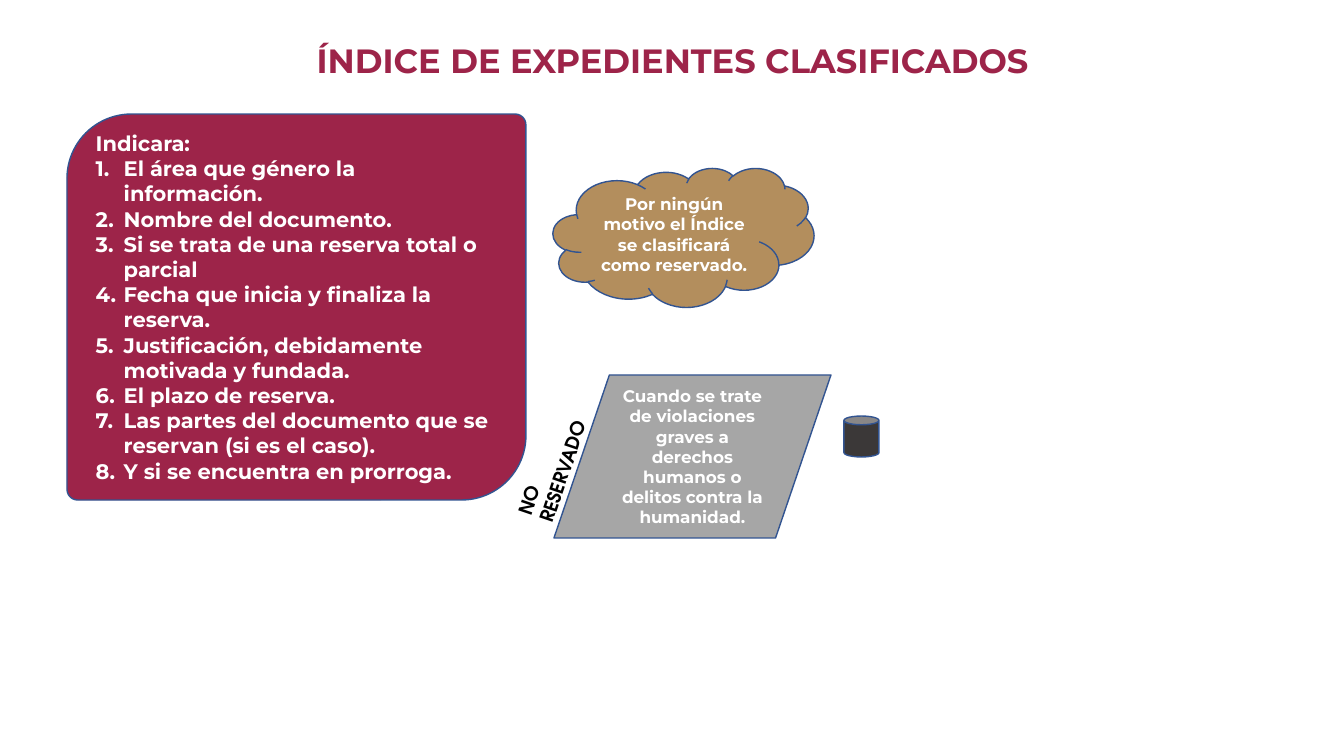
from dataclasses import dataclass

from lxml import etree
from pptx import Presentation
from pptx.dml.color import RGBColor
from pptx.enum.shapes import MSO_SHAPE
from pptx.enum.text import MSO_ANCHOR, PP_ALIGN
from pptx.oxml.ns import qn
from pptx.util import Emu, Pt

LEFT, CENTER = PP_ALIGN.LEFT, PP_ALIGN.CENTER
MIDDLE, BOTTOM, TOP = MSO_ANCHOR.MIDDLE, MSO_ANCHOR.BOTTOM, MSO_ANCHOR.TOP
ROUNDED = MSO_SHAPE.ROUND_2_DIAG_RECTANGLE
CAN, CLOUD, DATA = MSO_SHAPE.CAN, MSO_SHAPE.CLOUD, MSO_SHAPE.FLOWCHART_DATA

PAGE_SIZE = (1344, 756)
TITLE = "ÍNDICE DE EXPEDIENTES CLASIFICADOS"
INDEX_HEADING = "Indicara:"
INDEX_ITEMS = [
    "El área que género la información.",
    "Nombre del documento.",
    "Si se trata de una reserva total o parcial",
    "Fecha que inicia y finaliza la reserva.",
    "Justificación, debidamente motivada y fundada.",
    "El plazo de reserva.",
    "Las partes del documento que se reservan (si es el caso).",
    "Y si se encuentra en prorroga.",
]
CLOUD_NOTE = "Por ningún motivo el Índice se clasificará como reservado."
EXCEPTION = ("Cuando se trate de violaciones graves a derechos humanos "
             "o delitos contra la humanidad.")
EXCEPTION_LABEL = "NO RESERVADO"


@dataclass(frozen=True)
class Theme:
    wine: str = "9D2449"
    gold: str = "B38E5D"
    gray: str = "A6A6A6"
    charcoal: str = "3B3838"
    outline: str = "325491"
    white: str = "FFFFFF"
    black: str = "000000"
    body_font: str = "Montserrat"
    label_font: str = "TeX Gyre Adventor"
    title_size: float = 24
    list_size: float = 15
    note_size: float = 12
    label_size: float = 13.5


THEME = Theme()
LIST_INDENT = 28

SHAPES = [
    dict(kind=ROUNDED, frame=(67, 114, 459, 386), fill=THEME.wine,
         adjustments=(0.167, 0.028), lines=[INDEX_HEADING, *INDEX_ITEMS],
         size=THEME.list_size, align=LEFT, numbered_from=1),
    dict(kind=CAN, frame=(844, 416, 35, 41), fill=THEME.charcoal),
    dict(kind=CLOUD, frame=(553, 168, 261, 139), fill=THEME.gold,
         lines=[CLOUD_NOTE], size=THEME.note_size),
    dict(kind=DATA, frame=(554, 375, 277, 163), fill=THEME.gray,
         lines=[EXCEPTION], size=THEME.note_size),
]


def px(length):
    return Emu(round(length * 914400 / 100.8))


def apply_format(target, values):
    for name, value in values.items():
        setattr(target, name, value)


def number_paragraph(para):
    properties = para._p.get_or_add_pPr()
    properties.set("marL", str(px(LIST_INDENT)))
    properties.set("indent", str(-px(LIST_INDENT)))
    etree.SubElement(properties, qn("a:buFont"), typeface="+mj-lt")
    etree.SubElement(properties, qn("a:buAutoNum"), type="arabicPeriod")


def write_text(box, lines, size, color=THEME.white, font=THEME.body_font,
               align=CENTER, anchor=MIDDLE, spacing=1.0, numbered_from=None):
    frame = box.text_frame
    apply_format(frame, {"word_wrap": True, "vertical_anchor": anchor})
    for index, line in enumerate(lines):
        para = frame.add_paragraph() if index else frame.paragraphs[0]
        apply_format(para, {"alignment": align, "line_spacing": spacing})
        if numbered_from is not None and index >= numbered_from:
            number_paragraph(para)
        span = para.add_run()
        span.text = line
        apply_format(span.font, {"name": font, "size": Pt(size), "bold": True})
        span.font.color.rgb = RGBColor.from_string(color)


def add_shape(page, kind, frame, fill, adjustments=(), lines=(), **text):
    shape = page.shapes.add_shape(kind, *map(px, frame))
    shape.shadow.inherit = False
    shape.fill.solid()
    shape.fill.fore_color.rgb = RGBColor.from_string(fill)
    shape.line.color.rgb = RGBColor.from_string(THEME.outline)
    shape.line.width = Pt(1)
    for index, value in enumerate(adjustments):
        shape.adjustments[index] = value
    if lines:
        write_text(shape, lines, **text)


def add_text(page, frame, line, rotation=0, **text):
    box = page.shapes.add_textbox(*map(px, frame))
    box.rotation = rotation
    write_text(box, [line], **text)


def main():
    deck = Presentation()
    deck.slide_width, deck.slide_height = map(px, PAGE_SIZE)
    page = deck.slides.add_slide(deck.slide_layouts[6])
    add_text(page, (93, 0, 1159, 86), TITLE, size=THEME.title_size,
             color=THEME.wine, anchor=BOTTOM, spacing=0.9)
    for shape in SHAPES:
        add_shape(page, **shape)
    add_text(page, (479, 425, 157, 56), EXCEPTION_LABEL, rotation=288.8,
             size=THEME.label_size, color=THEME.black, font=THEME.label_font,
             align=LEFT, anchor=TOP)
    deck.save("out.pptx")


if __name__ == "__main__":
    main()
